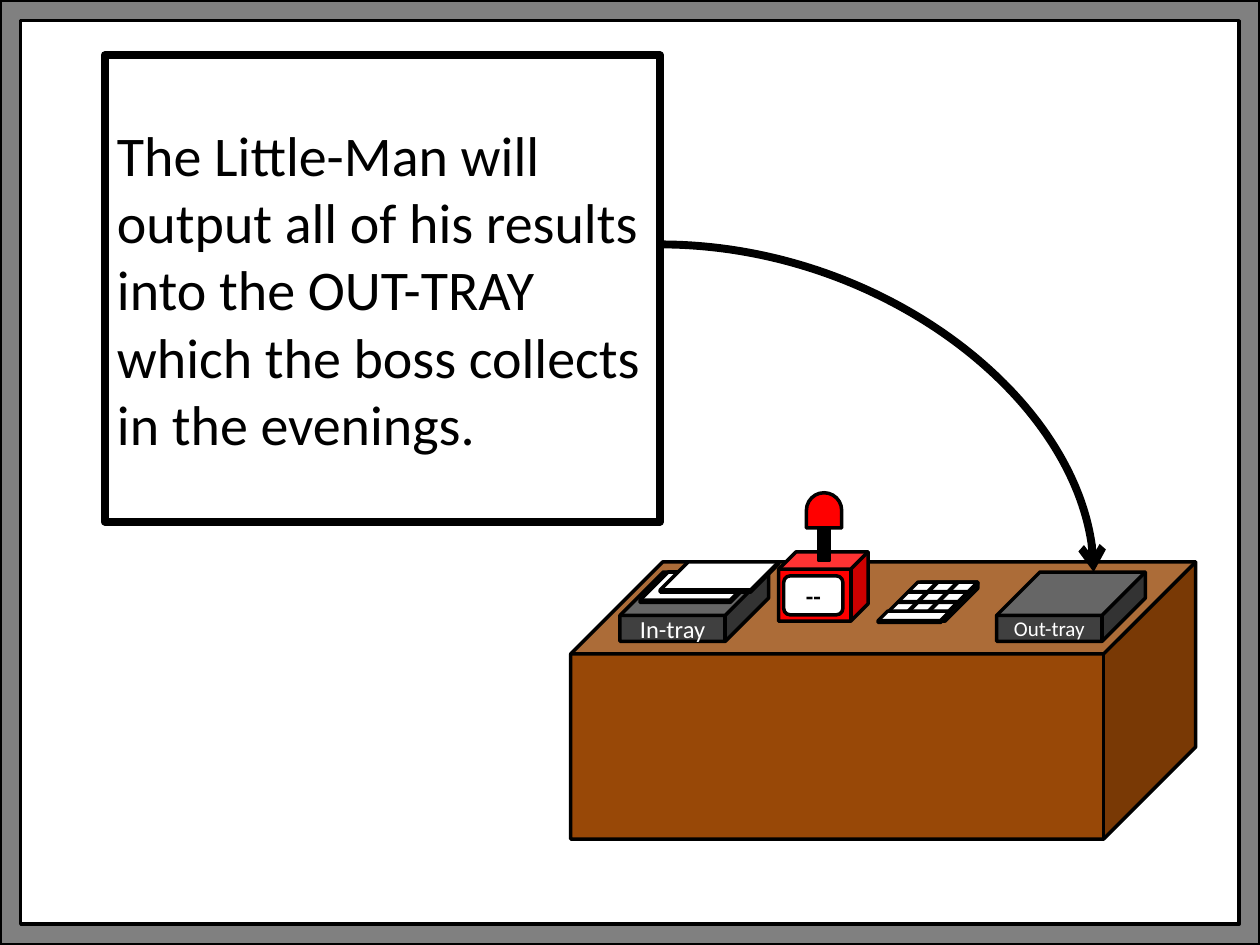
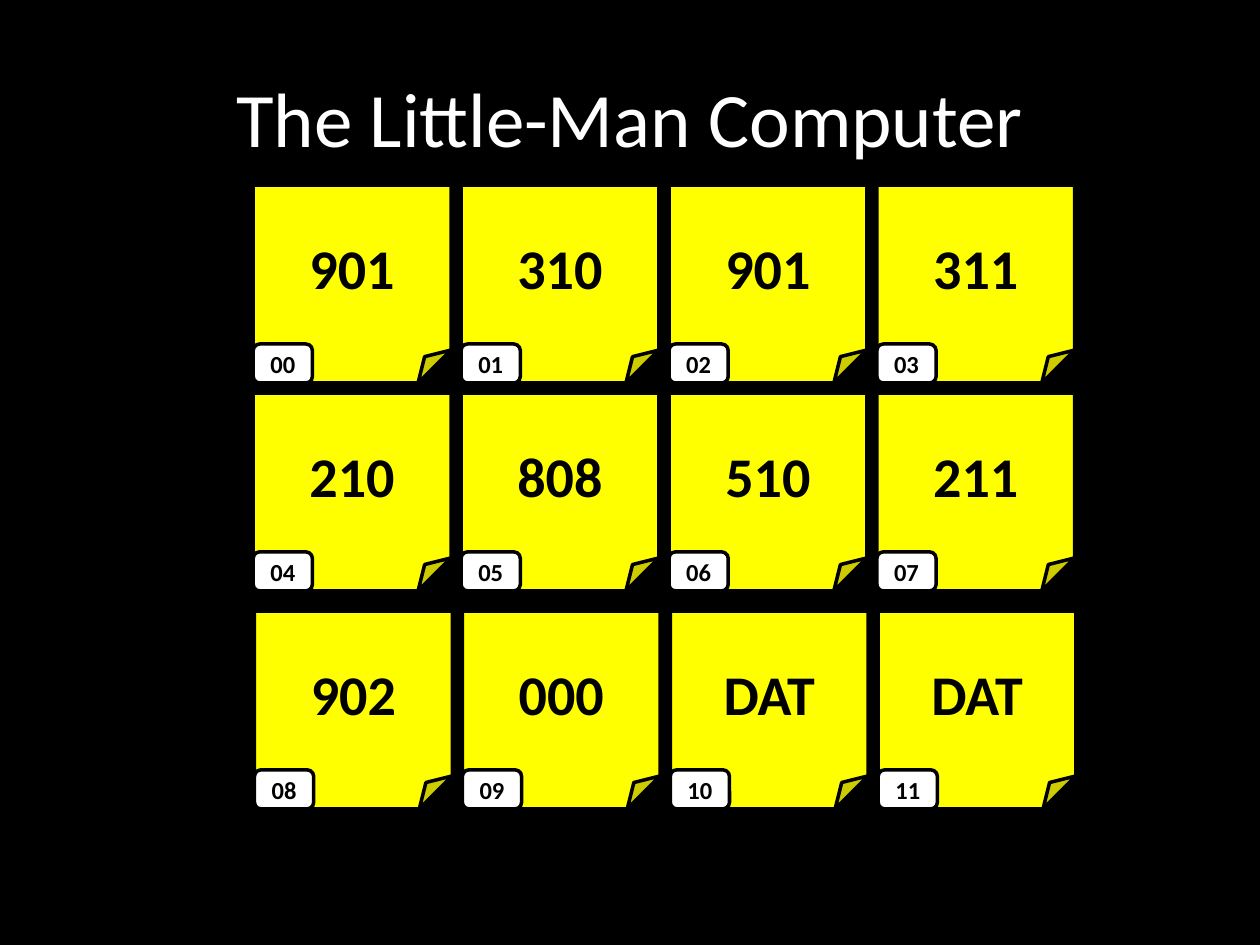
import lxml.etree
import pptx
import pptx.dml.color
import pptx.enum.shapes
import pptx.enum.text
import pptx.oxml.ns
import pptx.util

RGB = pptx.dml.color.RGBColor
KIND = pptx.enum.shapes.MSO_SHAPE
ALIGN = pptx.enum.text.PP_ALIGN
MIDDLE = pptx.enum.text.MSO_ANCHOR.MIDDLE

BLACK = RGB(0x00, 0x00, 0x00)
WHITE = RGB(0xFF, 0xFF, 0xFF)
BROWN = RGB(0x98, 0x48, 0x07)
DARK = RGB(0x40, 0x40, 0x40)
GREY = RGB(0x80, 0x80, 0x80)
RED = RGB(0xFF, 0x00, 0x00)
YELLOW = RGB(0xFF, 0xFF, 0x00)

FONT = "Calibri"
COLS, ROWS = 10, 7.5  # the slide as a grid of one-inch cells
THIN, THICK = 2, 4.5
TAG = (0.47, 0.31)
NOTE = 1.57
PITCH = 1.65
KEY = 0.837

NOTES = [
    ["901", "310", "901", "311"],
    ["210", "808", "510", "211"],
    ["902", "000", "DAT", "DAT"],
]
STARTS = [(2.01, 1.47), (2.01, 3.12), (2.02, 4.85)]


def cell(count):
    """Length of a number of grid cells."""
    return pptx.util.Inches(count)


def write(shape, words, size=14, color=BLACK, bold=False, align=ALIGN.CENTER):
    frame = shape.text_frame
    frame.word_wrap = True
    frame.vertical_anchor = MIDDLE
    frame.text = words
    para = frame.paragraphs[0]
    para.alignment = align
    font = para.runs[0].font
    font.name, font.size, font.bold = FONT, pptx.util.Pt(size), bold
    font.color.rgb = color


def draw(slide, kind, x, y, wide, high, fill=None, line=THIN, adj=None):
    shape = slide.shapes.add_shape(kind, cell(x), cell(y), cell(wide), cell(high))
    shape.shadow.inherit = False
    if fill is None:
        shape.fill.background()
    else:
        shape.fill.solid()
        shape.fill.fore_color.rgb = fill
    shape.line.color.rgb = BLACK
    shape.line.width = pptx.util.Pt(line)
    if adj is not None:
        shape.adjustments[0] = adj
    return shape


def cube(slide, x, y, wide, high, fill=WHITE, adj=KEY):
    return draw(slide, KIND.CUBE, x, y, wide, high, fill, adj=adj)


def tag(slide, x, y, words):
    write(draw(slide, KIND.ROUNDED_RECTANGLE, x, y, *TAG, WHITE), words, bold=True)


def note(slide, x, y, words, label):
    """Sticky note with a numbered tag in its lower left corner."""
    paper = draw(slide, KIND.FOLDED_CORNER, x, y, NOTE, NOTE, YELLOW)
    write(paper, words, size=32, bold=True)
    tag(slide, x, y + NOTE - TAG[1], label)


def tray(slide, x, words, size):
    box = cube(slide, x, 4.54, 1.18, 0.55, DARK, adj=0.625)
    write(box, words, size=size, color=WHITE)


def sheet(slide, x, y):
    cube(slide, x, y, 0.94, 0.24, adj=0.928)


def alarm(slide):
    cube(slide, 6.18, 4.38, 0.71, 0.55, RED, adj=0.25)
    draw(slide, KIND.RECTANGLE, 6.5, 4.14, 0.08, 0.31, BLACK)
    lamp = draw(slide, KIND.FLOWCHART_DELAY, 6.4, 3.91, 0.28, 0.28, RED)
    lamp.rotation = 270
    tag(slide, 6.22, 4.57, "--")


def keypad(slide):
    cube(slide, 7.05, 4.62, 0.71, 0.31)
    for row in range(3):
        for col in range(3):
            x = 7.21 + 0.16 * col - 0.08 * row
            cube(slide, x, 4.62 + 0.08 * row, 0.23, 0.09)
    cube(slide, 6.97, 4.85, 0.57, 0.09)


def arrow(slide, x, y, right, low):
    """Curve that leaves level and arrives from above."""
    curve = slide.shapes.add_connector(
        pptx.enum.shapes.MSO_CONNECTOR.CURVE,
        cell(x), cell(y), cell(right), cell(low))
    curve.line.color.rgb = BLACK
    curve.line.width = pptx.util.Pt(THICK)
    qn = pptx.oxml.ns.qn
    props = curve.element.spPr
    props.find(qn("a:prstGeom")).set("prst", "curvedConnector2")
    lxml.etree.SubElement(props.find(qn("a:ln")), qn("a:tailEnd"), type="arrow")
    lxml.etree.SubElement(props, qn("a:effectLst"))


def page(deck, layout, color):
    slide = deck.slides.add_slide(deck.slide_layouts.get_by_name(layout))
    slide.background.fill.solid()
    slide.background.fill.fore_color.rgb = color
    return slide


def desk(deck):
    slide = page(deck, "Blank", WHITE)
    cube(slide, 4.53, 4.46, 4.96, 2.2, BROWN, adj=0.332)
    tray(slide, 4.92, "In-tray", 14)
    tray(slide, 7.91, "Out-tray", 12)
    sheet(slide, 5.08, 4.54)
    alarm(slide)
    keypad(slide)
    sheet(slide, 5.24, 4.46)
    draw(slide, KIND.FRAME, 0, 0, COLS, ROWS, GREY, adj=0.022)
    box = draw(slide, KIND.RECTANGLE, 0.83, 0.44, 4.41, 3.7, line=THICK)
    write(box, "The Little-Man will output all of his results into the "
          "OUT-TRAY which the boss collects in the evenings.",
          size=32, align=ALIGN.LEFT)
    arrow(slide, 5.24, 1.94, 8.68, 4.54)


def memory(deck):
    slide = page(deck, "Title Only", BLACK)
    title = slide.shapes.title
    title.left, title.top = cell(0.5), cell(0.3)
    title.width, title.height = cell(9), cell(1.25)
    write(title, "The Little-Man Computer", size=44, color=WHITE)
    for row, (words, (left, top)) in enumerate(zip(NOTES, STARTS)):
        for col, word in enumerate(words):
            label = f"{row * len(words) + col:02}"
            note(slide, left + col * PITCH, top, word, label)


def main():
    deck = pptx.Presentation()
    deck.slide_width, deck.slide_height = cell(COLS), cell(ROWS)
    desk(deck)
    memory(deck)
    deck.save("out.pptx")


if __name__ == "__main__":
    main()
